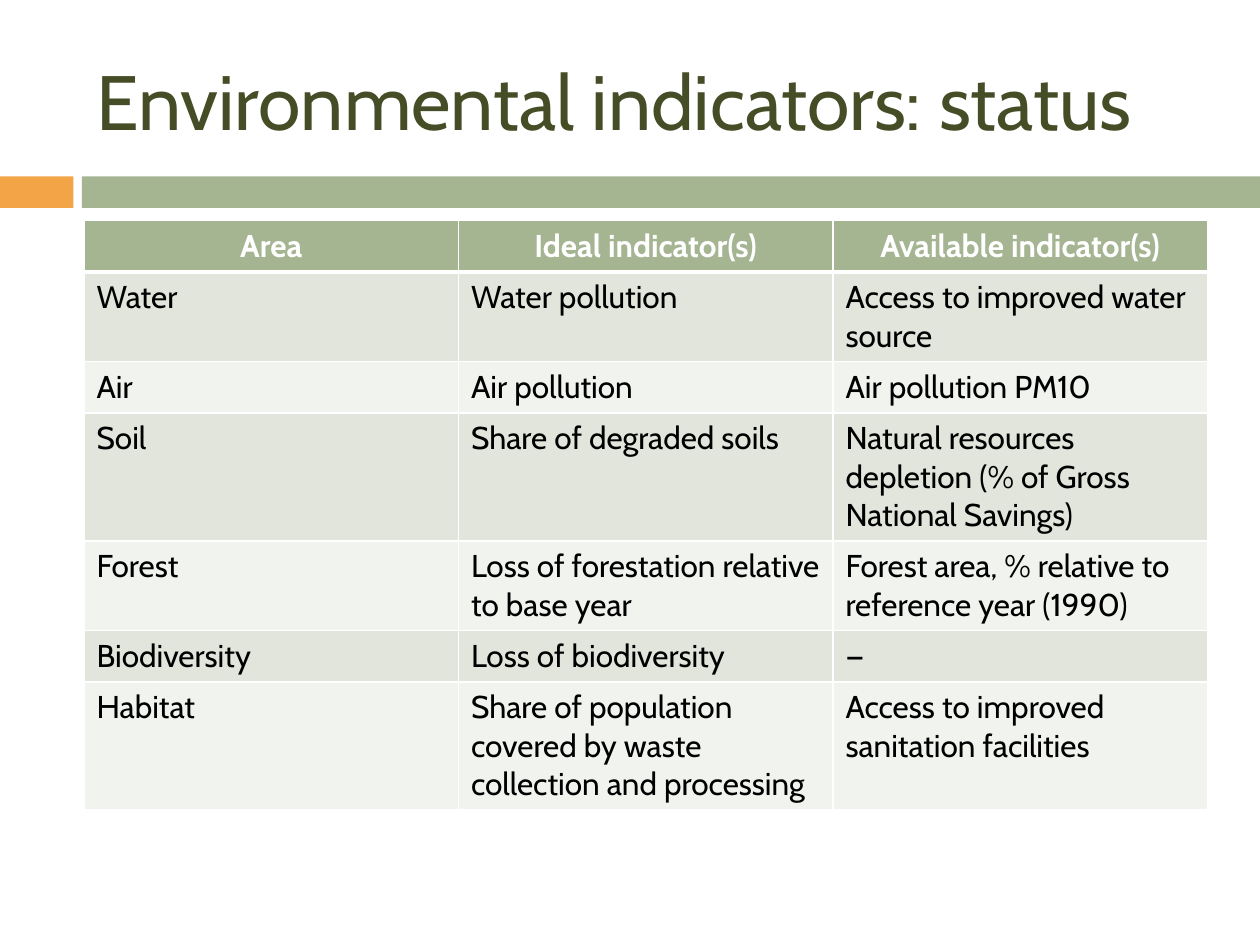
from lxml.etree import SubElement
from pptx import Presentation
from pptx.dml.color import RGBColor
from pptx.enum.shapes import MSO_SHAPE
from pptx.enum.text import MSO_ANCHOR, PP_ALIGN
from pptx.oxml.ns import qn
from pptx.util import Inches, Pt

HUES = {"title": "444D26", "accent": "F3A447", "band": "A5B592", "odd": "E1E5DC",
        "even": "F0F3EE", "white": "FFFFFF", "ink": "000000"}
ROWS = [
    ("Area", "Ideal indicator(s)", "Available indicator(s)"),
    ("Water", "Water pollution", "Access to improved water source"),
    ("Air", "Air pollution", "Air pollution PM10"),
    ("Soil", "Share of degraded soils",
     "Natural resources depletion (% of Gross National Savings)"),
    ("Forest", "Loss of forestation relative to base year",
     "Forest area, % relative to reference year (1990)"),
    ("Biodiversity", "Loss of biodiversity", "—"),
    ("Habitat", "Share of population covered by waste collection and processing",
     "Access to improved sanitation facilities"),
]


class Deck:
    font = "Cabin"
    unit = Inches(1) / 12

    def __init__(self):
        self.prs = Presentation()
        self.prs.slide_width, self.prs.slide_height = Inches(10), Inches(7.5)
        self.slide = self.prs.slides.add_slide(self.prs.slide_layouts[5])

    def box(self, *spans):
        return [round(span * self.unit) for span in spans]

    def paint(self, fill, hue):
        fill.solid()
        fill.fore_color.rgb = RGBColor.from_string(HUES[hue])

    def label(self, frame, text, size, hue, align=PP_ALIGN.LEFT, bold=False):
        para = frame.paragraphs[0]
        para.alignment = align
        run = para.add_run()
        run.text = text
        run.font.name, run.font.size, run.font.bold = self.font, Pt(size), bold
        run.font.color.rgb = RGBColor.from_string(HUES[hue])

    def bar(self, left, top, width, height, hue):
        bar = self.slide.shapes.add_shape(
            MSO_SHAPE.RECTANGLE, *self.box(left, top, width, height))
        bar.shadow.inherit = False
        self.paint(bar.fill, hue)
        bar.line.fill.background()

    def title(self, left, top, width, height, text):
        title = self.slide.shapes.title
        title.left, title.top, title.width, title.height = self.box(
            left, top, width, height)
        title.text_frame.vertical_anchor = MSO_ANCHOR.MIDDLE
        self.label(title.text_frame, text, 44, "title")

    def edge(self, cell, widths):
        props = cell._tc.get_or_add_tcPr()
        for side, width in widths.items():
            line = SubElement(props, qn(f"a:ln{side}"), w=str(Pt(width)))
            fill = SubElement(line, qn("a:solidFill"))
            SubElement(fill, qn("a:srgbClr"), val=HUES["white"])

    def table(self, left, top, width, step, rows):
        grid = self.slide.shapes.add_table(
            len(rows), len(rows[0]), *self.box(left, top, width, step * len(rows))).table
        for i, row in enumerate(rows):
            head = i == 0
            hue = "band" if head else "odd" if i % 2 else "even"
            for j, text in enumerate(row):
                cell = grid.cell(i, j)
                self.edge(cell, {"L": 1, "R": 1, "T": 3 if i == 1 else 1,
                                 "B": 3 if head else 1})
                self.paint(cell.fill, hue)
                self.label(cell.text_frame, text, 18, "white" if head else "ink",
                           PP_ALIGN.CENTER if head else PP_ALIGN.LEFT, head)

    def save(self):
        self.prs.save("out.pptx")


def main():
    deck = Deck()
    deck.bar(0, 16.8, 7, 3, "accent")
    deck.bar(7.8, 16.8, 112.2, 3, "band")
    deck.title(8, 3, 107, 13, "Environmental indicators: status")
    deck.table(8, 21, 107, 4.9, ROWS)
    deck.save()


if __name__ == "__main__":
    main()
